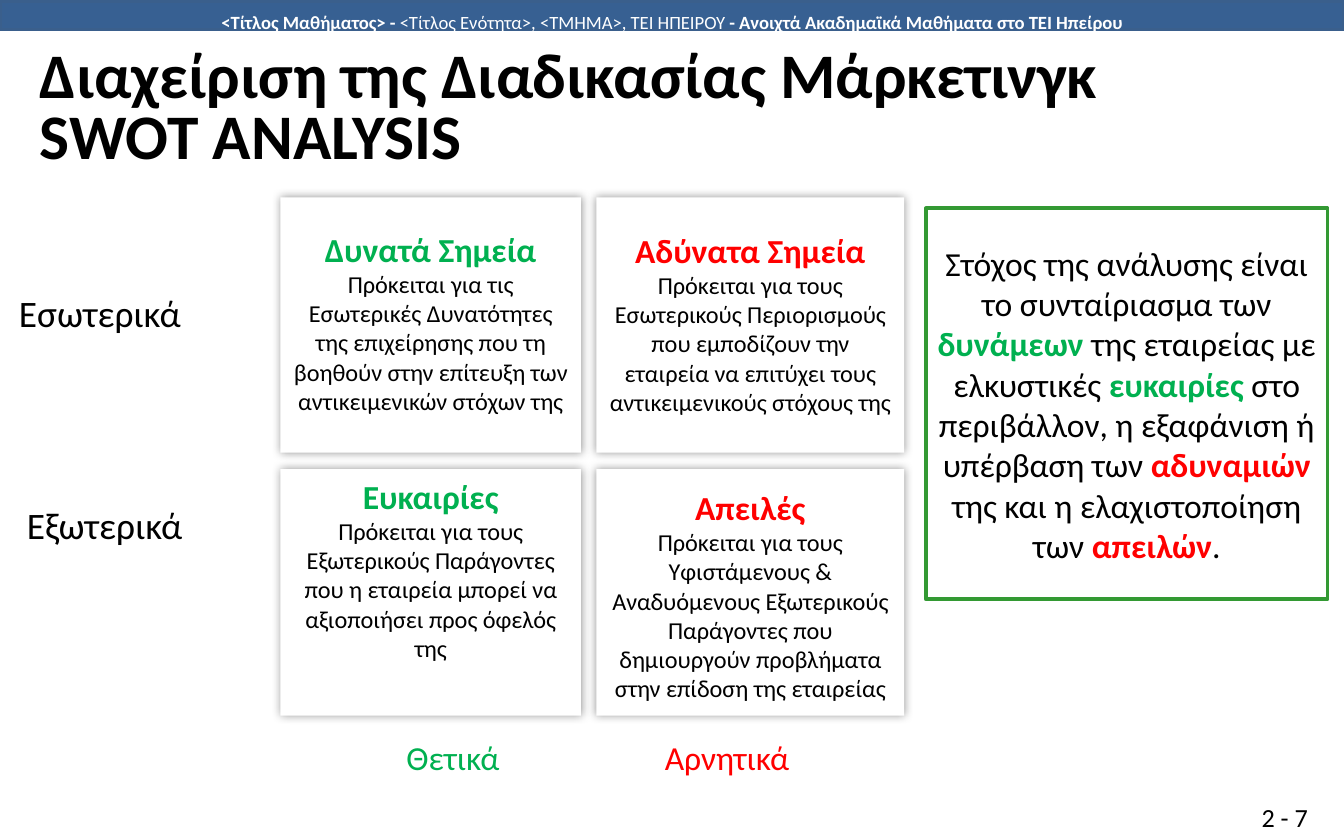
"""Build a SWOT analysis slide with python-pptx."""
from dataclasses import dataclass

from lxml.etree import SubElement
from pptx import Presentation
from pptx.dml.color import RGBColor
from pptx.enum.shapes import MSO_SHAPE
from pptx.enum.text import MSO_ANCHOR, PP_ALIGN
from pptx.oxml.ns import qn
from pptx.util import Cm, Pt


@dataclass(frozen=True)
class Theme:
    font: str = "Calibri"
    text: str = "000000"
    paper: str = "FFFFFF"
    positive: str = "00B050"
    negative: str = "FF0000"
    frame: str = "339933"
    banner: str = "376092"
    banner_line: str = "3A5F8C"
    banner_size: int = 10
    body_size: int = 13
    number_size: int = 14
    heading_size: int = 18
    label_size: int = 20
    title_size: int = 34


THEME = Theme()

COLUMNS = [(5.3, 5.68), (11.27, 5.82)]
ROWS = [(3.73, 4.83), (8.87, 4.66)]

# Each card: column, row, top inset, heading, description
CARDS = [
    (0, 0, 0.6, "Δυνατά Σημεία",
     "Πρόκειται για τις Εσωτερικές Δυνατότητες της επιχείρησης που τη "
     "βοηθούν στην επίτευξη των αντικειμενικών στόχων της"),
    (1, 0, 0.62, "Αδύνατα Σημεία",
     "Πρόκειται για τους Εσωτερικούς Περιορισμούς που εμποδίζουν την "
     "εταιρεία να επιτύχει τους αντικειμενικούς στόχους της"),
    (0, 1, 0.13, "Ευκαιρίες",
     "Πρόκειται για τους Εξωτερικούς Παράγοντες που η εταιρεία μπορεί να "
     "αξιοποιήσει προς όφελός της"),
    (1, 1, 0.34, "Απειλές",
     "Πρόκειται για τους Υφιστάμενους & Αναδυόμενους Εξωτερικούς Παράγοντες "
     "που δημιουργούν προβλήματα στην επίδοση της εταιρείας"),
]

LABELS = [
    ("Εσωτερικά", 0, 5.33, 3.78, THEME.label_size, THEME.text),
    ("Εξωτερικά", 0, 9.35, 3.96, THEME.label_size, THEME.text),
    ("Θετικά", 7.11, 13.74, 2.9, THEME.heading_size, THEME.positive),
    ("Αρνητικά", 12.29, 13.74, 2.9, THEME.heading_size, THEME.negative),
]

GOAL = [
    ("Στόχος της ανάλυσης είναι το συνταίριασμα των ", THEME.text),
    ("δυνάμεων ", THEME.positive),
    ("της εταιρείας με ελκυστικές ", THEME.text),
    ("ευκαιρίες ", THEME.positive),
    ("στο περιβάλλον, η εξαφάνιση ή υπέρβαση των ", THEME.text),
    ("αδυναμιών ", THEME.negative),
    ("της και η ελαχιστοποίηση των ", THEME.text),
    ("απειλών", THEME.negative),
    (".", THEME.text),
]


def format_run(run, size, color=THEME.text, bold=False):
    run.font.name = THEME.font
    run.font.size = Pt(size)
    run.font.bold = bold
    run.font.color.rgb = RGBColor.from_string(color)


def format_paragraph(paragraph, size, color=THEME.text, bold=False,
                     alignment=PP_ALIGN.CENTER):
    paragraph.alignment = alignment
    for run in paragraph.runs:
        format_run(run, size, color, bold)


def add_runs(paragraph, runs, size):
    """Append (text, color, bold) runs to a centred paragraph."""
    paragraph.alignment = PP_ALIGN.CENTER
    for text, color, bold in runs:
        run = paragraph.add_run()
        run.text = text
        format_run(run, size, color, bold)


def set_frame(text_frame, horizontal=0.2, vertical=0.1):
    text_frame.word_wrap = True
    text_frame.vertical_anchor = MSO_ANCHOR.MIDDLE
    text_frame.margin_left = text_frame.margin_right = Cm(horizontal)
    text_frame.margin_top = text_frame.margin_bottom = Cm(vertical)
    return text_frame


def add_text_box(slide, left, top, width, height):
    shape = slide.shapes.add_textbox(Cm(left), Cm(top), Cm(width), Cm(height))
    return set_frame(shape.text_frame)


def add_rectangle(slide, left, top, width, height, fill=THEME.paper, line=None):
    shape = slide.shapes.add_shape(
        MSO_SHAPE.RECTANGLE, Cm(left), Cm(top), Cm(width), Cm(height))
    shape.shadow.inherit = False
    shape.fill.solid()
    shape.fill.fore_color.rgb = RGBColor.from_string(fill)
    if line:
        shape.line.color.rgb = RGBColor.from_string(line)
        shape.line.width = Pt(2)
    else:
        shape.line.fill.background()
    set_frame(shape.text_frame)
    return shape


def add_glow_shadow(shape):
    """Put a soft, centred shadow around the shape."""
    effects = shape._element.spPr.find(qn("a:effectLst"))
    shadow = SubElement(effects, qn("a:outerShdw"), blurRad=str(Pt(5)),
                        dist="0", dir="0", algn="ctr", rotWithShape="0")
    color = SubElement(shadow, qn("a:srgbClr"), val=THEME.text)
    SubElement(color, qn("a:alpha"), val="40000")


def add_banner(slide):
    add_rectangle(slide, 0, 0.03, 25.4, 0.53, THEME.banner, THEME.banner_line)
    text_frame = add_text_box(slide, 0, 0.13, 25.4, 0.56)
    set_frame(text_frame, vertical=0)
    add_runs(text_frame.paragraphs[0], [
        ("<Τίτλος Μαθήματος> - ", THEME.paper, True),
        ("<Τίτλος Ενότητα>, <ΤΜΗΜΑ>, ΤΕΙ ΗΠΕΙΡΟΥ ", THEME.paper, False),
        ("- Ανοιχτά Ακαδημαϊκά Μαθήματα στο ΤΕΙ Ηπείρου", THEME.paper, True),
    ], THEME.banner_size)


def add_title(slide):
    text_frame = add_text_box(slide, 0.5, 0.9, 22.6, 2.4)
    set_frame(text_frame, horizontal=0.25)
    paragraph = text_frame.paragraphs[0]
    paragraph.text = "Διαχείριση της Διαδικασίας Μάρκετινγκ\vSWOT ANALYSIS"
    paragraph.line_spacing = 0.8
    format_paragraph(paragraph, THEME.title_size, bold=True,
                     alignment=PP_ALIGN.LEFT)


def add_card(slide, column, row, inset, heading, description):
    left, width = COLUMNS[column]
    top, height = ROWS[row]
    shape = add_rectangle(slide, left, top, width, height)
    add_glow_shadow(shape)
    text_frame = shape.text_frame
    text_frame.vertical_anchor = MSO_ANCHOR.TOP
    text_frame.margin_top = Cm(inset)
    text_frame.text = f"{heading}\n{description}"
    color = (THEME.positive, THEME.negative)[column]
    format_paragraph(text_frame.paragraphs[0], THEME.heading_size, color, True)
    format_paragraph(text_frame.paragraphs[1], THEME.body_size)


def add_label(slide, text, left, top, width, size, color):
    text_frame = add_rectangle(slide, left, top, width, 1.14).text_frame
    text_frame.text = text
    format_paragraph(text_frame.paragraphs[0], size, color)


def add_goal(slide):
    shape = add_rectangle(slide, 17.5, 3.94, 7.59, 7.39, line=THEME.frame)
    runs = [(text, color, color != THEME.text) for text, color in GOAL]
    add_runs(shape.text_frame.paragraphs[0], runs, THEME.heading_size)


def add_page_number(slide):
    text_frame = add_text_box(slide, 22.48, 15.04, 2.44, 0.83)
    text_frame.text = "2 - 7"
    format_paragraph(text_frame.paragraphs[0], THEME.number_size,
                     alignment=PP_ALIGN.RIGHT)


def main():
    presentation = Presentation()
    presentation.slide_width = Cm(25.4)
    presentation.slide_height = Cm(15.88)
    slide = presentation.slides.add_slide(presentation.slide_layouts[6])
    add_banner(slide)
    add_page_number(slide)
    add_title(slide)
    for card in CARDS:
        add_card(slide, *card)
    for label in LABELS:
        add_label(slide, *label)
    add_goal(slide)
    presentation.save("out.pptx")


if __name__ == "__main__":
    main()
